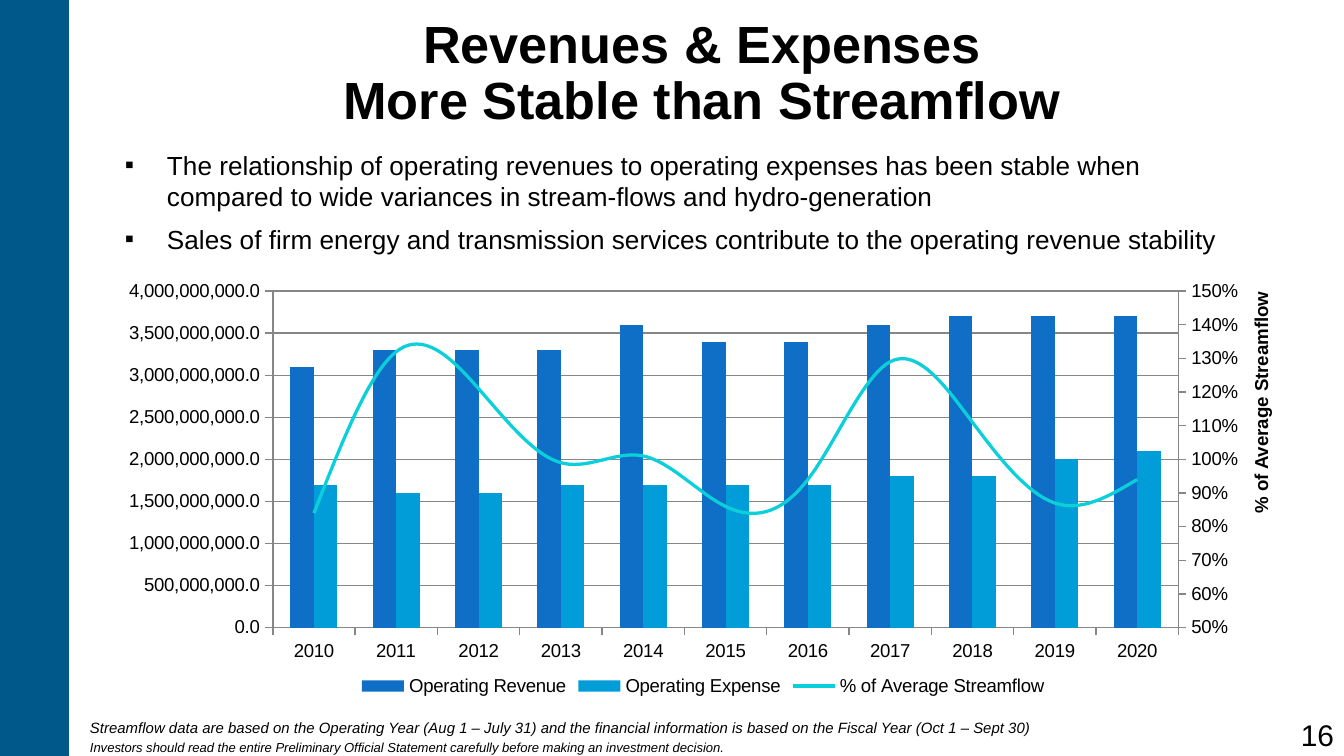
"""Build the slide on revenues and expenses against streamflow."""
from lxml import etree
from pptx import Presentation
from pptx import util as u
from pptx.chart import data as cd
from pptx.dml import color
from pptx.enum import chart as ce, shapes, text
from pptx.oxml import ns, parse_xml

COLORS = {"band": "00588A", "ink": "000000", "axis": "868686",
          "revenue": "0F6FC6", "expense": "009DD9", "streamflow": "0BD0D9"}
FONT = "Arial"
BILLION = 10 ** 9
YEARS = [str(year) for year in range(2010, 2021)]
REVENUE = [3.1, 3.3, 3.3, 3.3, 3.6, 3.4, 3.4, 3.6, 3.7, 3.7, 3.7]
EXPENSE = [1.7, 1.6, 1.6, 1.7, 1.7, 1.7, 1.7, 1.8, 1.8, 2.0, 2.1]
STREAMFLOW = [0.84, 1.32, 1.21, 0.99, 1.01, 0.86, 0.94, 1.29, 1.11, 0.87, 0.94]

LAYOUT = """<c:layout %s><c:manualLayout><c:layoutTarget val="inner"/>
<c:xMode val="edge"/><c:yMode val="edge"/><c:x val="0.12"/><c:y val="0.06"/>
<c:w val="0.8"/><c:h val="0.77"/></c:manualLayout></c:layout>"""
LINE_PLOT = """<c:lineChart %s><c:grouping val="standard"/><c:varyColors val="0"/>
<c:marker val="1"/><c:axId val="501"/><c:axId val="502"/></c:lineChart>"""
RIGHT_AXIS = """<c:valAx %s><c:axId val="502"/><c:scaling><c:orientation val="minMax"/>
<c:max val="1.5"/><c:min val="0.5"/></c:scaling><c:delete val="0"/><c:axPos val="r"/>
<c:numFmt formatCode="0%%" sourceLinked="0"/><c:majorTickMark val="out"/>
<c:minorTickMark val="none"/><c:tickLblPos val="nextTo"/><c:spPr><a:ln w="9525">
<a:solidFill><a:srgbClr val="{axis}"/></a:solidFill></a:ln></c:spPr><c:crossAx val="501"/>
<c:crosses val="max"/><c:crossBetween val="between"/><c:majorUnit val="0.1"/></c:valAx>"""
HIDDEN_AXIS = """<c:catAx %s><c:axId val="501"/><c:scaling><c:orientation val="minMax"/>
</c:scaling><c:delete val="1"/><c:axPos val="b"/><c:majorTickMark val="none"/>
<c:minorTickMark val="none"/><c:tickLblPos val="nextTo"/><c:crossAx val="502"/>
<c:crosses val="autoZero"/></c:catAx>"""


def px(length):
    return u.Emu(round(length * 914400 / 134.4))


def rgb(name):
    return color.RGBColor.from_string(COLORS[name])


def chart_xml(template):
    return parse_xml(template.replace("{axis}", COLORS["axis"]) % ns.nsdecls("c", "a"))


class SlideBuilder:
    def __init__(self, slide):
        self.slide = slide

    def band(self, *box):
        band = self.slide.shapes.add_shape(shapes.MSO_SHAPE.RECTANGLE, *map(px, box))
        band.shadow.inherit = False
        band.fill.solid()
        band.fill.fore_color.rgb = rgb("band")
        band.line.fill.background()

    def text(self, box, paragraphs, size, bold=False, italic=False, align="LEFT",
             anchor="TOP", bullet=None, spacing=None, after=0, wrap=True, rotation=0,
             inset=(13, 7)):
        words = self.slide.shapes.add_textbox(*map(px, box))
        words.rotation = rotation
        frame = words.text_frame
        frame.word_wrap = wrap
        frame.vertical_anchor = text.MSO_ANCHOR[anchor]
        frame.margin_left = frame.margin_right = px(inset[0])
        frame.margin_top = frame.margin_bottom = px(inset[1])
        for index, lines in enumerate(paragraphs):
            paragraph = frame.add_paragraph() if index else frame.paragraphs[0]
            paragraph.alignment = text.PP_ALIGN[align]
            paragraph.line_spacing = spacing
            paragraph.space_after = u.Pt(after)
            if bullet:
                self.bullet(paragraph, bullet)
            for number, line in enumerate(lines.split("\n")):
                if number:
                    paragraph.add_line_break()
                run = paragraph.add_run()
                run.text = line
                run.font.name, run.font.size = FONT, u.Pt(size)
                run.font.bold, run.font.italic = bold, italic
                run.font.color.rgb = rgb("ink")

    def bullet(self, paragraph, mark):
        properties = paragraph._p.get_or_add_pPr()
        properties.set("marL", str(px(42)))
        properties.set("indent", str(px(-42)))
        etree.SubElement(properties, ns.qn("a:buFont"), typeface=FONT)
        etree.SubElement(properties, ns.qn("a:buChar"), char=mark)

    def chart(self, *box):
        figures = cd.CategoryChartData()
        figures.categories = YEARS
        for name, values in (("Operating Revenue", REVENUE), ("Operating Expense", EXPENSE)):
            figures.add_series(name, [round(value * BILLION) for value in values])
        figures.add_series("% of Average Streamflow", STREAMFLOW, "0%")
        chart = self.slide.shapes.add_chart(
            ce.XL_CHART_TYPE.COLUMN_CLUSTERED, *map(px, box), figures).chart
        chart.has_title = False
        chart.font.name, chart.font.size = FONT, u.Pt(10)
        chart.font.color.rgb = rgb("ink")
        chart.has_legend = True
        chart.legend.position = ce.XL_LEGEND_POSITION.BOTTOM
        chart.legend.include_in_layout = False
        self.axes(chart)
        self.streamflow_line(chart)
        columns, curve = chart.plots
        columns.gap_width, columns.overlap = 150, 0
        columns.vary_by_categories = False
        for series, name in zip(columns.series, ("revenue", "expense")):
            series.format.fill.solid()
            series.format.fill.fore_color.rgb = rgb(name)
        streamflow = curve.series[0]
        streamflow.smooth = True
        streamflow.marker.style = ce.XL_MARKER_STYLE.NONE
        streamflow.format.line.width = u.Pt(1.75)
        streamflow.format.line.color.rgb = rgb("streamflow")

    def axes(self, chart):
        dollars = chart.value_axis
        dollars.minimum_scale, dollars.maximum_scale = 0, 4 * BILLION
        dollars.major_unit = BILLION // 2
        dollars.tick_labels.number_format = "#,##0.0"
        dollars.tick_labels.number_format_is_linked = False
        dollars.has_major_gridlines = True
        for part in (dollars, chart.category_axis, dollars.major_gridlines):
            part.format.line.color.rgb = rgb("axis")
            part.format.line.width = u.Pt(0.75)
        for axis in (dollars, chart.category_axis):
            axis.major_tick_mark = ce.XL_TICK_MARK.OUTSIDE

    def streamflow_line(self, chart):
        area = chart._chartSpace.find(".//" + ns.qn("c:plotArea"))
        for layout in area.findall(ns.qn("c:layout")):
            area.remove(layout)
        area.insert(0, chart_xml(LAYOUT))
        columns = area.find(ns.qn("c:barChart"))
        streamflow = columns.findall(ns.qn("c:ser"))[-1]
        for flag in streamflow.findall(ns.qn("c:invertIfNegative")):
            streamflow.remove(flag)
        curve = chart_xml(LINE_PLOT)
        curve.insert(2, streamflow)
        columns.addnext(curve)
        left_axis = area.find(ns.qn("c:valAx"))
        left_axis.addnext(chart_xml(RIGHT_AXIS))
        left_axis.getnext().addnext(chart_xml(HIDDEN_AXIS))


def main():
    deck = Presentation()
    deck.slide_width, deck.slide_height = px(1344), px(756)
    page = SlideBuilder(deck.slides.add_slide(deck.slide_layouts[6]))
    page.band(0, 0, 69, 756)
    page.text((71, 40, 1261, 69), ["Revenues & Expenses\nMore Stable than Streamflow"], 28,
              bold=True, align="CENTER", anchor="MIDDLE", spacing=0.9)
    page.text((112, 142, 1155, 120), [
        "The relationship of operating revenues to operating expenses has been stable when "
        "compared to wide variances in stream-flows and hydro-generation",
        "Sales of firm energy and transmission services contribute to the operating revenue "
        "stability"], 14, bullet="▪", after=6)
    page.chart(129, 265, 1140, 437)
    page.text((1134, 382, 253, 36), ["% of Average Streamflow"], 10, bold=True, wrap=False,
              rotation=270)
    page.text((77, 712, 1202, 42), [
        "Streamflow data are based on the Operating Year (Aug 1 – July 31) and the financial "
        "information is based on the Fiscal Year (Oct 1 – Sept 30)"], 8, italic=True)
    page.text((77, 732, 676, 28), [
        "Investors should read the entire Preliminary Official Statement carefully before "
        "making an investment decision."], 7, italic=True)
    page.text((1285, 712, 58, 40), ["16"], 16, align="RIGHT", inset=(9, 5))
    deck.save("out.pptx")


if __name__ == "__main__":
    main()
